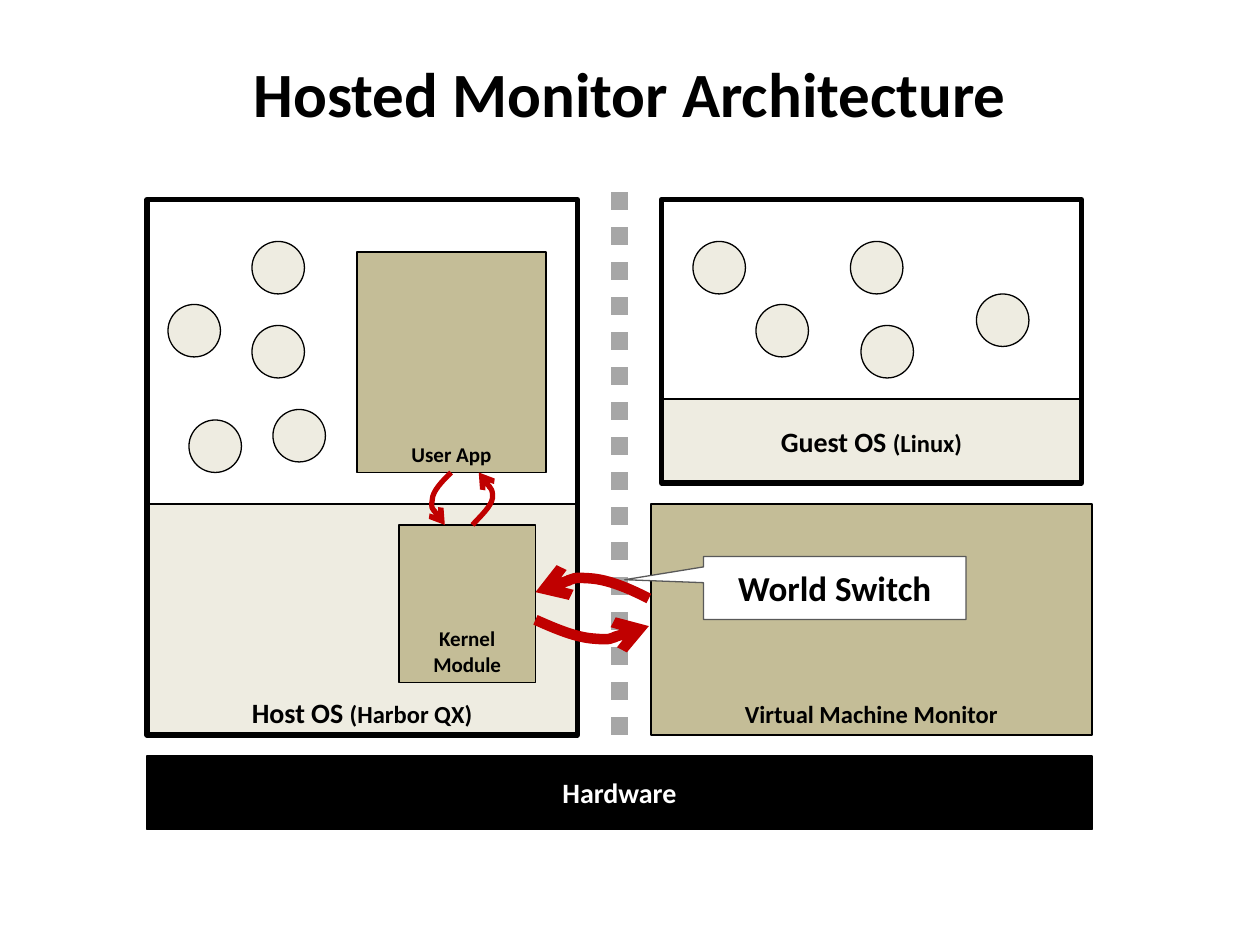
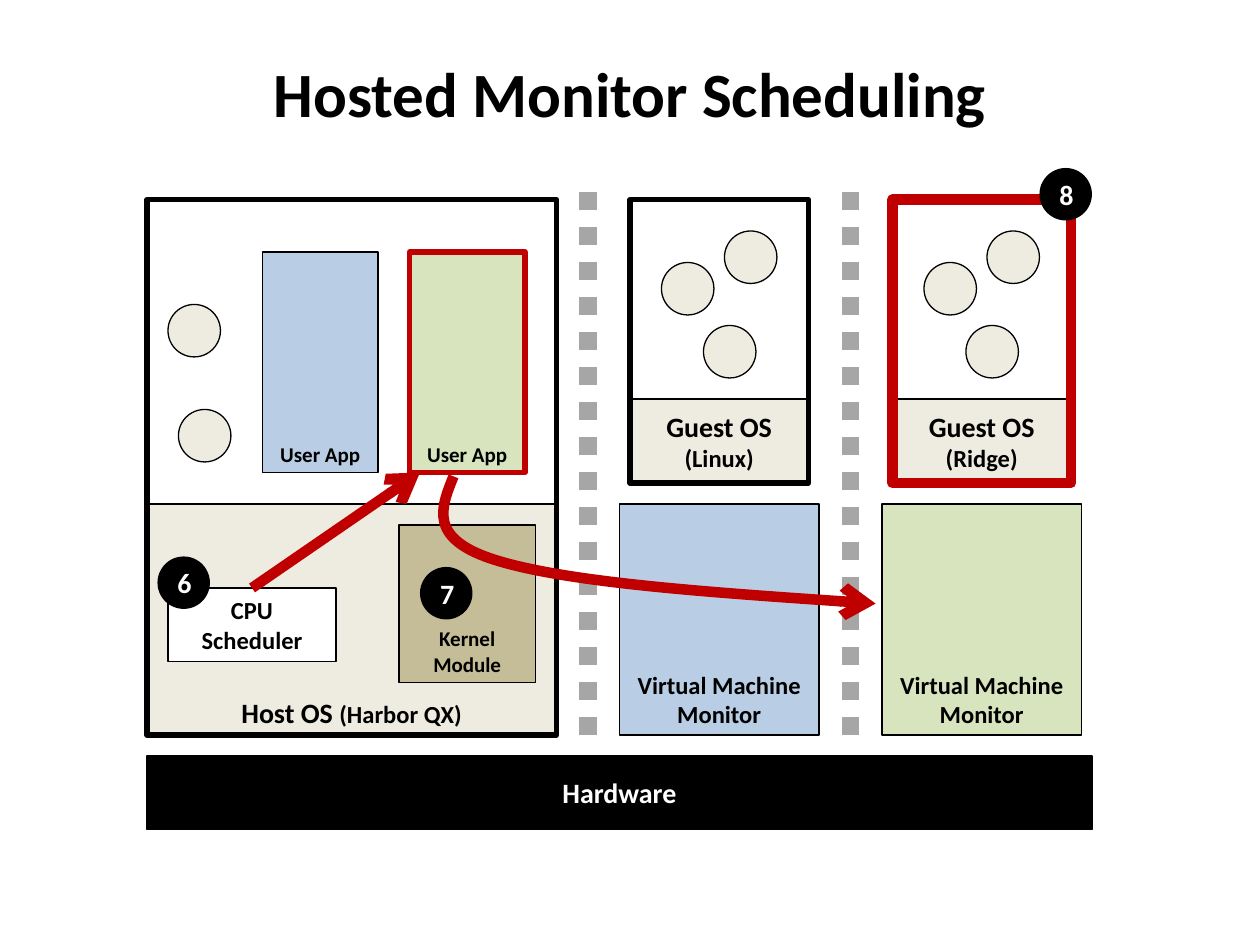
import pptx
import pptx.util
import pptx.dml.color
import pptx.enum.dml
import pptx.enum.shapes
import pptx.enum.text
import pptx.oxml.ns
from dataclasses import dataclass
from lxml import etree

Pt = pptx.util.Pt
qn = pptx.oxml.ns.qn
PRESETS = pptx.enum.shapes.MSO_SHAPE
ANCHORS = pptx.enum.text.MSO_ANCHOR


@dataclass(frozen=True)
class Theme:
    font: str = "Calibri"
    black: str = "000000"
    white: str = "FFFFFF"
    cream: str = "EEECE1"
    tan: str = "C4BD97"
    blue: str = "B9CDE5"
    green: str = "D7E4BD"
    red: str = "C00000"
    grey: str = "A6A6A6"
    callout_edge: str = "595959"
    title: int = 36
    callout: int = 20
    system: int = 16
    detail: int = 14
    module: int = 12
    thin: float = 0.75
    medium: float = 1.5
    thick: int = 3
    heavy: int = 6
    dotted: int = 10


THEME = Theme()

TOP, FLOOR = 114, 420
LEFT = 84
KERNEL_SPLIT = 288
GUEST_SPLIT, GUEST_FLOOR = 228, 276
PROCESS_SIZE = 30
GUEST_TRIO = [(18, 150), (42, 186), (54, 132)]

ARCHITECTURE = {
    "title": "Hosted Monitor Architecture",
    "host_width": 246,
    "host_processes": [(96, 174), (144, 186), (108, 240), (144, 138), (156, 234)],
    "guests": [
        {"left": 378, "width": 240, "name": "(Linux)", "monitor": THEME.tan,
         "edge": THEME.black, "edge_width": THEME.thick,
         "processes": [(18, 138), (114, 186), (54, 174), (180, 168), (108, 138)]},
    ],
    "apps": [(204, 108, THEME.tan, THEME.black, THEME.thin)],
}

SCHEDULING = {
    "title": "Hosted Monitor Scheduling",
    "host_width": 234,
    "host_processes": [(96, 174), (102, 234)],
    "guests": [
        {"left": 360, "width": 102, "name": "(Linux)", "monitor": THEME.blue,
         "edge": THEME.black, "edge_width": THEME.thick, "processes": GUEST_TRIO},
        {"left": 510, "width": 102, "name": "(Ridge)", "monitor": THEME.green,
         "edge": THEME.red, "edge_width": THEME.heavy, "processes": GUEST_TRIO},
    ],
    "apps": [(150, 66, THEME.blue, THEME.black, THEME.thin),
             (234, 66, THEME.green, THEME.red, THEME.thick)],
}

WORLD_SWITCHES = [
    [(370.8, 342), (359.3, 336.2), (347.8, 331.2), (337, 330.5),
     (326.2, 329.8), (316.1, 334.1), (306, 338.4)],
    [(306, 354.2), (317.5, 359.3), (329, 364.3), (339.8, 365),
     (349.9, 365.8), (360.7, 361.4), (370.8, 357.8)],
]
APP_CALLS = [
    [(270, 300), (275, 294.5), (280.8, 289.4), (281.5, 284.4),
     (281.5, 279.4), (277.9, 275), (273.6, 270)],
    [(257.8, 270), (252.7, 275), (247, 280.8), (247, 285.8),
     (246.2, 290.9), (249.8, 295.2), (254.2, 300)],
]
DISPATCH = [(259.2, 272.2), (252, 290.2), (244.1, 308.2), (284.4, 320.4),
            (324.7, 332.6), (412.6, 339.1), (500.4, 344.9)]


def rgb(value):
    return pptx.dml.color.RGBColor.from_string(value)


def set_line(line, color, width):
    line.color.rgb = rgb(color)
    line.width = Pt(width)


def write(frame, parts, color=THEME.black, anchor=ANCHORS.MIDDLE):
    frame.word_wrap = True
    frame.vertical_anchor = anchor
    paragraph = frame.paragraphs[0]
    paragraph.text = parts[0][0]
    for words, _ in parts[1:]:
        paragraph.add_run().text = words
    paragraph.alignment = pptx.enum.text.PP_ALIGN.CENTER
    for run, (_, size) in zip(paragraph.runs, parts):
        run.font.name = THEME.font
        run.font.size = Pt(size)
        run.font.bold = True
        run.font.color.rgb = rgb(color)


def block(slide, box, fill=None, edge=THEME.black, width=THEME.thin, parts=None,
          color=THEME.black, anchor=ANCHORS.MIDDLE, preset=PRESETS.RECTANGLE):
    shape = slide.shapes.add_shape(preset, *map(Pt, box))
    shape.shadow.inherit = False
    if fill:
        shape.fill.solid()
        shape.fill.fore_color.rgb = rgb(fill)
    else:
        shape.fill.background()
    if edge:
        set_line(shape.line, edge, width)
    else:
        shape.line.fill.background()
    if parts:
        write(shape.text_frame, parts, color, anchor)
    return shape


def add_arrowhead(arrow):
    outline = arrow._element.spPr.find(qn("a:ln"))
    etree.SubElement(outline, qn("a:tailEnd"), type="arrow")


def connect(slide, start, end, color, width):
    connector = slide.shapes.add_connector(
        pptx.enum.shapes.MSO_CONNECTOR.STRAIGHT, *map(Pt, start + end))
    set_line(connector.line, color, width)
    etree.SubElement(connector._element.spPr, qn("a:effectLst"))
    return connector


def curve(slide, points, width):
    start, *rest = [tuple(map(Pt, point)) for point in points]
    builder = slide.shapes.build_freeform(*start)
    builder.add_line_segments(rest, close=False)
    arrow = builder.convert_to_shape()
    arrow.shadow.inherit = False
    arrow.fill.background()
    set_line(arrow.line, THEME.red, width)
    add_arrowhead(arrow)
    outline = next(arrow._element.iter(qn("a:path")))
    segments = outline.findall(qn("a:lnTo"))
    for first in range(0, len(segments), 3):
        bezier = etree.SubElement(outline, qn("a:cubicBezTo"))
        for segment in segments[first:first + 3]:
            bezier.append(segment[0])
            outline.remove(segment)


def process(slide, left, top):
    block(slide, (left, top, PROCESS_SIZE, PROCESS_SIZE), THEME.cream, preset=PRESETS.OVAL)


def badge(slide, number, left, top):
    block(slide, (left, top, PROCESS_SIZE, PROCESS_SIZE), THEME.black, None,
          parts=[(number, THEME.system)], color=THEME.white, preset=PRESETS.OVAL)


def draw_host(slide, width, processes):
    host = block(slide, (LEFT, KERNEL_SPLIT, width, FLOOR - KERNEL_SPLIT), THEME.cream,
                 width=THEME.medium, anchor=ANCHORS.BOTTOM,
                 parts=[("Host OS ", THEME.system), ("(Harbor QX)", THEME.detail)])
    host.text_frame.paragraphs[0].space_after = Pt(6)
    block(slide, (LEFT, TOP, width, KERNEL_SPLIT - TOP), THEME.white, width=THEME.medium)
    block(slide, (LEFT, TOP, width, FLOOR - TOP), width=THEME.thick)
    for left, top in processes:
        process(slide, left, top)


def draw_guest(slide, guest):
    left, width = guest["left"], guest["width"]
    block(slide, (left - 6, KERNEL_SPLIT, width + 12, FLOOR - KERNEL_SPLIT), guest["monitor"],
          parts=[("Virtual Machine Monitor", THEME.detail)], anchor=ANCHORS.BOTTOM)
    block(slide, (left, GUEST_SPLIT, width, GUEST_FLOOR - GUEST_SPLIT), THEME.cream,
          width=THEME.medium,
          parts=[("Guest OS ", THEME.system), (guest["name"], THEME.detail)])
    block(slide, (left, TOP, width, GUEST_SPLIT - TOP), THEME.white, width=THEME.medium)
    for offset, top in guest["processes"]:
        process(slide, left + offset, top)
    block(slide, (left, TOP, width, GUEST_FLOOR - TOP), edge=guest["edge"],
          width=guest["edge_width"])
    divider = connect(slide, (left - 24, FLOOR), (left - 24, 108), THEME.grey, THEME.dotted)
    divider.line.dash_style = pptx.enum.dml.MSO_LINE.ROUND_DOT


def draw_machine(deck, content):
    slide = deck.slides.add_slide(deck.slide_layouts[6])
    title = slide.shapes.add_textbox(*map(Pt, (36, 21.6, 648, 62.6)))
    write(title.text_frame, [(content["title"], THEME.title)])
    block(slide, (LEFT, 432, 540, 42), THEME.black,
          parts=[("Hardware", THEME.system)], color=THEME.white)
    draw_host(slide, content["host_width"], content["host_processes"])
    for guest in content["guests"]:
        draw_guest(slide, guest)
    for left, width, fill, edge, edge_width in content["apps"]:
        block(slide, (left, 144, width, 126), fill, edge, edge_width,
              [("User App", THEME.module)], anchor=ANCHORS.BOTTOM)
    block(slide, (228, 300, 78, 90), THEME.tan,
          parts=[("Kernel Module", THEME.module)], anchor=ANCHORS.BOTTOM)
    return slide


def draw_architecture(deck):
    slide = draw_machine(deck, ARCHITECTURE)
    for points in WORLD_SWITCHES:
        curve(slide, points, THEME.heavy)
    world_switch = block(slide, (402, 318, 150, 36), THEME.white, THEME.callout_edge,
                         parts=[("World Switch", THEME.callout)],
                         preset=PRESETS.RECTANGULAR_CALLOUT)
    world_switch.adjustments[0] = -0.8
    world_switch.adjustments[1] = -0.13
    for points in APP_CALLS:
        curve(slide, points, THEME.thick)


def draw_scheduling(deck):
    slide = draw_machine(deck, SCHEDULING)
    scheduler = block(slide, (96, 336, 96, 42), THEME.white,
                      parts=[("CPU Scheduler", THEME.detail)])
    choice = connect(slide, (144, 336), (240, 270), THEME.red, THEME.heavy)
    choice.begin_connect(scheduler, 0)
    add_arrowhead(choice)
    badge(slide, "6", 90, 318)
    badge(slide, "7", 240, 324)
    curve(slide, DISPATCH, THEME.heavy)
    badge(slide, "8", 594, 96)


def main():
    deck = pptx.Presentation()
    deck.slide_width, deck.slide_height = Pt(720), Pt(540)
    draw_architecture(deck)
    draw_scheduling(deck)
    deck.save("out.pptx")


if __name__ == "__main__":
    main()
